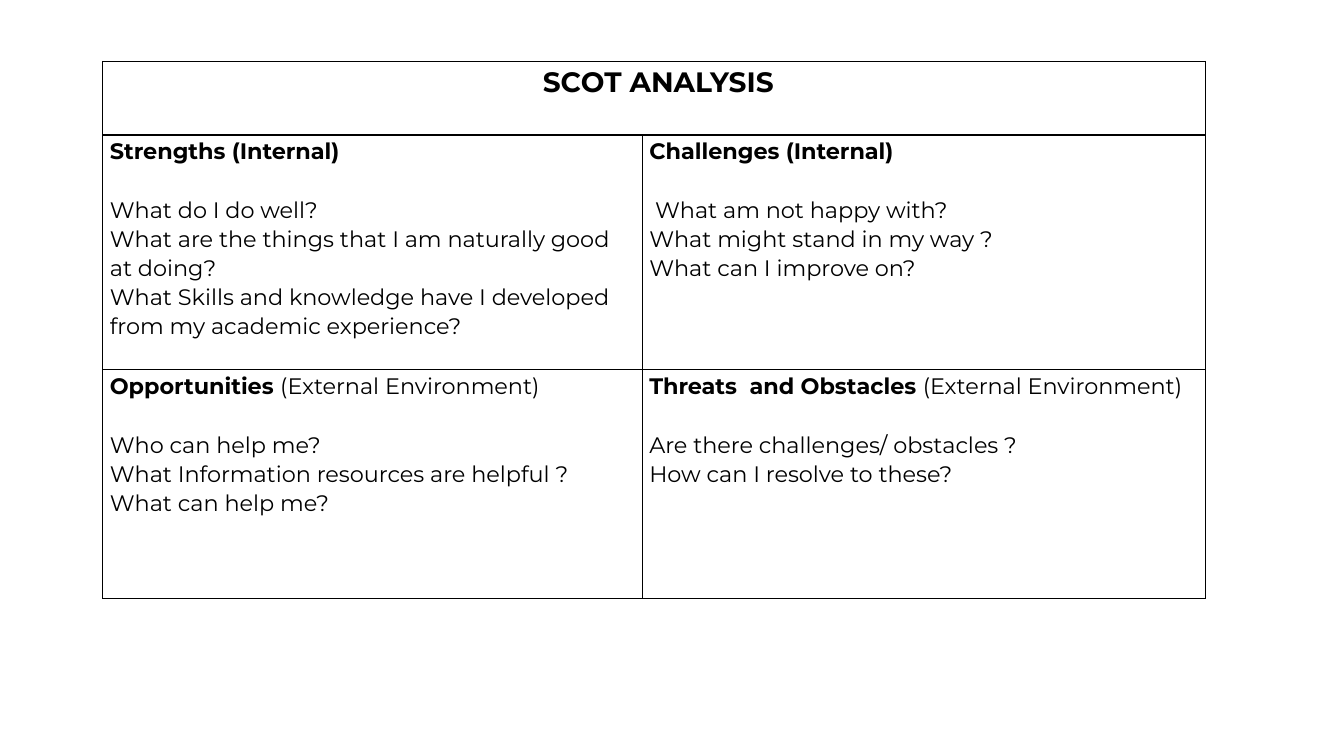
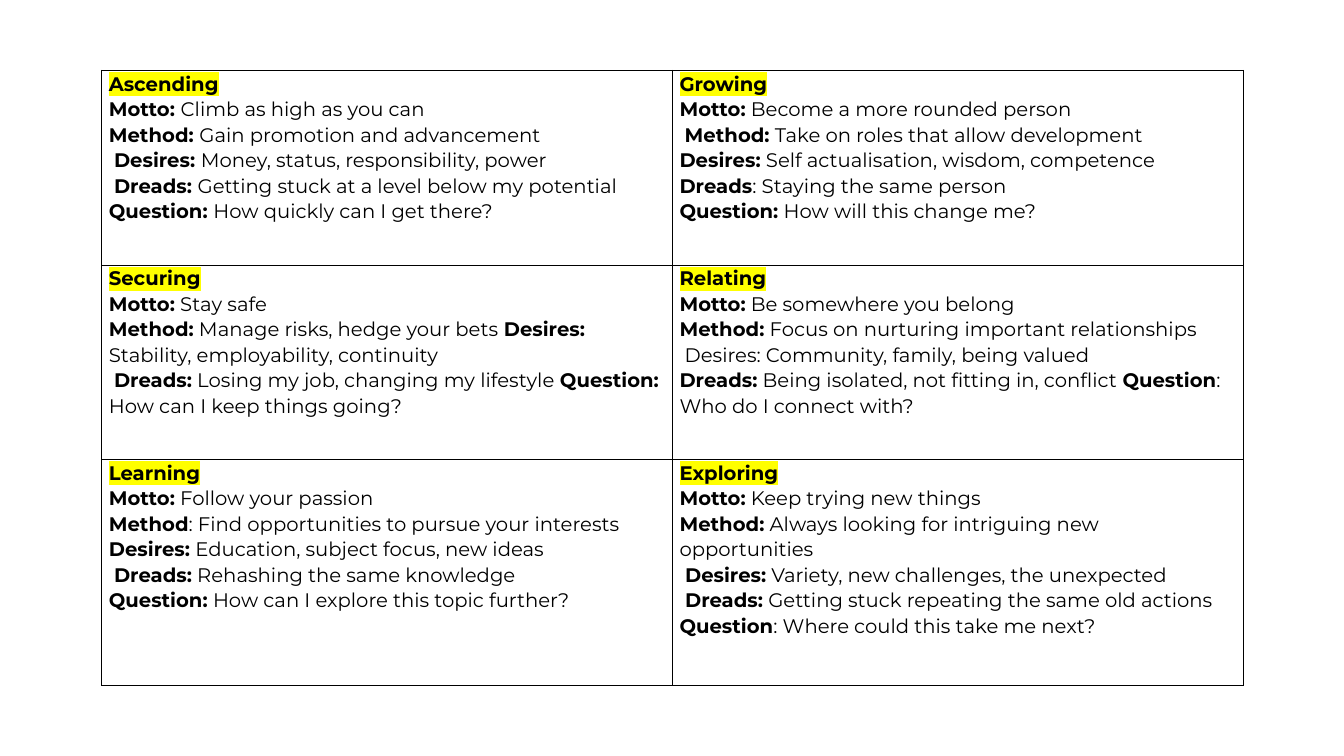
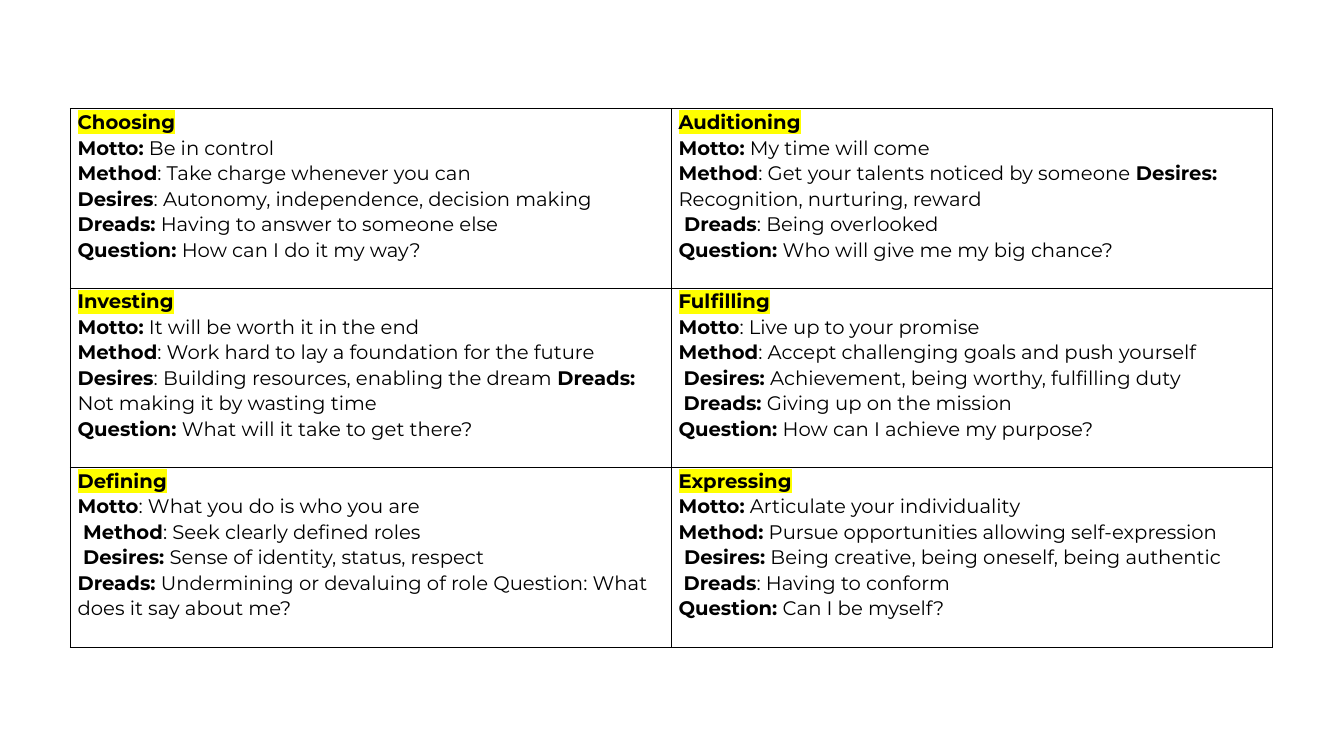
from lxml import etree
from pptx import Presentation
from pptx.dml.color import RGBColor
from pptx.enum.text import PP_ALIGN
from pptx.oxml.ns import qn
from pptx.util import Inches, Pt

CENTER = PP_ALIGN.CENTER
LEFT = PP_ALIGN.LEFT

FONT = "Montserrat"
BLACK = "000000"
YELLOW = "FFFF00"
LINE_SPACING = 1.07
BORDER_WIDTH = 1
BLANK_LAYOUT = 6

SCOT_TITLE = "* SCOT ANALYSIS*"

SCOT_GRID = [
    [
        [
            "*Strengths (Internal)*",
            "What do I do well?",
            "What are the things that I am naturally good at doing?",
            "What Skills and knowledge have I developed from my academic experience?",
        ],
        [
            "*Challenges (Internal)*",
            " What am not happy with?",
            "What might stand in my way ?",
            "What can I improve on?",
        ],
    ],
    [
        [
            "*Opportunities *(External Environment)",
            "Who can help me?",
            "What Information resources are helpful ?",
            "What can help me?",
        ],
        [
            "*Threats  and Obstacles *(External Environment)",
            "Are there challenges/ obstacles ?",
            "How can I resolve to these?",
        ],
    ],
]

GROWTH_GRID = [
    [
        [
            "*Ascending*",
            "*Motto: *Climb as high as you can",
            "*Method: *Gain promotion and advancement",
            " *Desires: *Money, status, responsibility, power",
            " *Dreads: *Getting stuck at a level below my potential",
            "*Question: *How quickly can I get there?",
        ],
        [
            "*Growing*",
            "*Motto:* Become a more rounded person",
            " *Method:* Take on roles that allow development",
            "*Desires:* Self actualisation, wisdom, competence",
            "*Dreads*: Staying the same person",
            "*Question:* How will this change me?",
        ],
    ],
    [
        [
            "*Securing*",
            "*Motto:* Stay safe",
            "*Method:* Manage risks, hedge your bets *Desires:* Stability, employability, continuity",
            " *Dreads:* Losing my job, changing my lifestyle *Question:* How can I keep things going?",
        ],
        [
            "*Relating*",
            "*Motto:* Be somewhere you belong",
            "*Method:* Focus on nurturing important relationships",
            " Desires: Community, family, being valued",
            "*Dreads:* Being isolated, not fitting in, conflict *Question*: Who do I connect with?",
        ],
    ],
    [
        [
            "*Learning*",
            "*Motto:* Follow your passion",
            "*Method*: Find opportunities to pursue your interests",
            "*Desires:* Education, subject focus, new ideas",
            " *Dreads:* Rehashing the same knowledge",
            "*Question:* How can I explore this topic further?",
        ],
        [
            "*Exploring*",
            "*Motto:* Keep trying new things",
            "*Method:* Always looking for intriguing new opportunities",
            "* Desires:* Variety, new challenges, the unexpected",
            "* Dreads:* Getting stuck repeating the same old actions *Question*: Where could this take me next?",
        ],
    ],
]

PURPOSE_GRID = [
    [
        [
            "*Choosing*",
            "*Motto:* Be in control",
            "*Method*: Take charge whenever you can",
            "*Desires*: Autonomy, independence, decision making",
            "*Dreads:* Having to answer to someone else",
            "*Question:* How can I do it my way?",
        ],
        [
            "*Auditioning*",
            "*Motto:* My time will come",
            "*Method*: Get your talents noticed by someone *Desires:* Recognition, nurturing, reward",
            "* Dreads*: Being overlooked",
            "*Question:* Who will give me my big chance?",
        ],
    ],
    [
        [
            "*Investing*",
            "*Motto:* It will be worth it in the end",
            "*Method*: Work hard to lay a foundation for the future",
            "*Desires*: Building resources, enabling the dream *Dreads:* Not making it by wasting time",
            "*Question:* What will it take to get there?",
        ],
        [
            "*Fulfilling*",
            "*Motto*: Live up to your promise",
            "*Method*: Accept challenging goals and push yourself",
            " *Desires:* Achievement, being worthy, fulfilling duty",
            " *Dreads:* Giving up on the mission",
            "*Question:* How can I achieve my purpose?",
        ],
    ],
    [
        [
            "*Defining*",
            "*Motto*: What you do is who you are",
            "* Method*: Seek clearly defined roles",
            "* Desires:* Sense of identity, status, respect",
            "*Dreads:* Undermining or devaluing of role Question: What does it say about me?",
        ],
        [
            "*Expressing*",
            "*Motto:* Articulate your individuality",
            "*Method:* Pursue opportunities allowing self-expression",
            "* Desires:* Being creative, being oneself, being authentic",
            " *Dreads*: Having to conform",
            "*Question:* Can I be myself?",
        ],
    ],
]


def color(value):
    return RGBColor.from_string(value)


def add_color_element(parent, tag, value):
    element = etree.SubElement(parent, qn(tag))
    etree.SubElement(element, qn("a:srgbClr"), val=value)


def add_span(para, text, size, bold=False, highlight=None):
    span = para.add_run()
    span.text = text
    font = span.font
    font.size = Pt(size)
    font.bold = bold
    font.color.rgb = color(BLACK)
    if highlight:
        add_color_element(span._r.get_or_add_rPr(), "a:highlight", highlight)
    font.name = FONT


def write_marked(para, text, size=14, align=LEFT, highlight=None, space_after=0):
    para.alignment = align
    para.line_spacing = LINE_SPACING
    para.space_after = Pt(space_after)
    for index, piece in enumerate(text.split("*")):
        if piece:
            add_span(para, piece, size, bold=index % 2 == 1, highlight=highlight)


def write_cell(cell, lines, size=14, align=LEFT, highlight=None, heading_gap=0):
    frame = cell.text_frame
    for index, line in enumerate(lines):
        if index == 0:
            write_marked(frame.paragraphs[0], line, size=size, align=align,
                         highlight=highlight, space_after=heading_gap)
        else:
            write_marked(frame.add_paragraph(), line, size=size, align=align)


def style_cell(cell, top_margin):
    cell.margin_left = cell.margin_right = Inches(0.07)
    cell.margin_top = Inches(top_margin)
    cell.margin_bottom = 0
    properties = cell._tc.get_or_add_tcPr()
    for side in ("a:lnL", "a:lnR", "a:lnT", "a:lnB"):
        line = etree.SubElement(properties, qn(side), w=str(Pt(BORDER_WIDTH)))
        add_color_element(line, "a:solidFill", BLACK)
    cell.fill.background()


def add_grid(page, left, top, widths, heights, top_margin=0):
    frame = page.shapes.add_table(
        len(heights), len(widths), Inches(left), Inches(top),
        Inches(sum(widths)), Inches(sum(heights)))
    table = frame.table
    table.first_row = False
    table.horz_banding = False
    for column, width in zip(table.columns, widths):
        column.width = Inches(width)
    for row, height in zip(table.rows, heights):
        row.height = Inches(height)
        for cell in row.cells:
            style_cell(cell, top_margin)
    return table


def fill_grid(table, grid, first_row=0, **format):
    for row, row_cells in enumerate(grid, first_row):
        for column, lines in enumerate(row_cells):
            write_cell(table.cell(row, column), lines, **format)


def add_page(deck):
    return deck.slides.add_slide(deck.slide_layouts[BLANK_LAYOUT])


def add_scot_page(deck):
    table = add_grid(add_page(deck), 1.02, 0.61, [5.35, 5.59],
                     [0.73, 2.33, 2.27], top_margin=0.01)
    title = table.cell(0, 0)
    title.merge(table.cell(0, 1))
    write_cell(title, [SCOT_TITLE], size=20, align=CENTER)
    fill_grid(table, SCOT_GRID, first_row=1, size=16, heading_gap=21)


def add_career_page(deck, grid, left, top, column_width, heights):
    table = add_grid(add_page(deck), left, top, [column_width] * 2, heights)
    fill_grid(table, grid, highlight=YELLOW)


def main():
    deck = Presentation()
    deck.slide_width = Inches(13.33)
    deck.slide_height = Inches(7.5)
    add_scot_page(deck)
    add_career_page(deck, GROWTH_GRID, 1.01, 0.7, 5.66, [1.93, 1.93, 2.24])
    add_career_page(deck, PURPOSE_GRID, 0.7, 1.08, 5.96, [1.78] * 3)
    deck.save("out.pptx")


if __name__ == "__main__":
    main()
